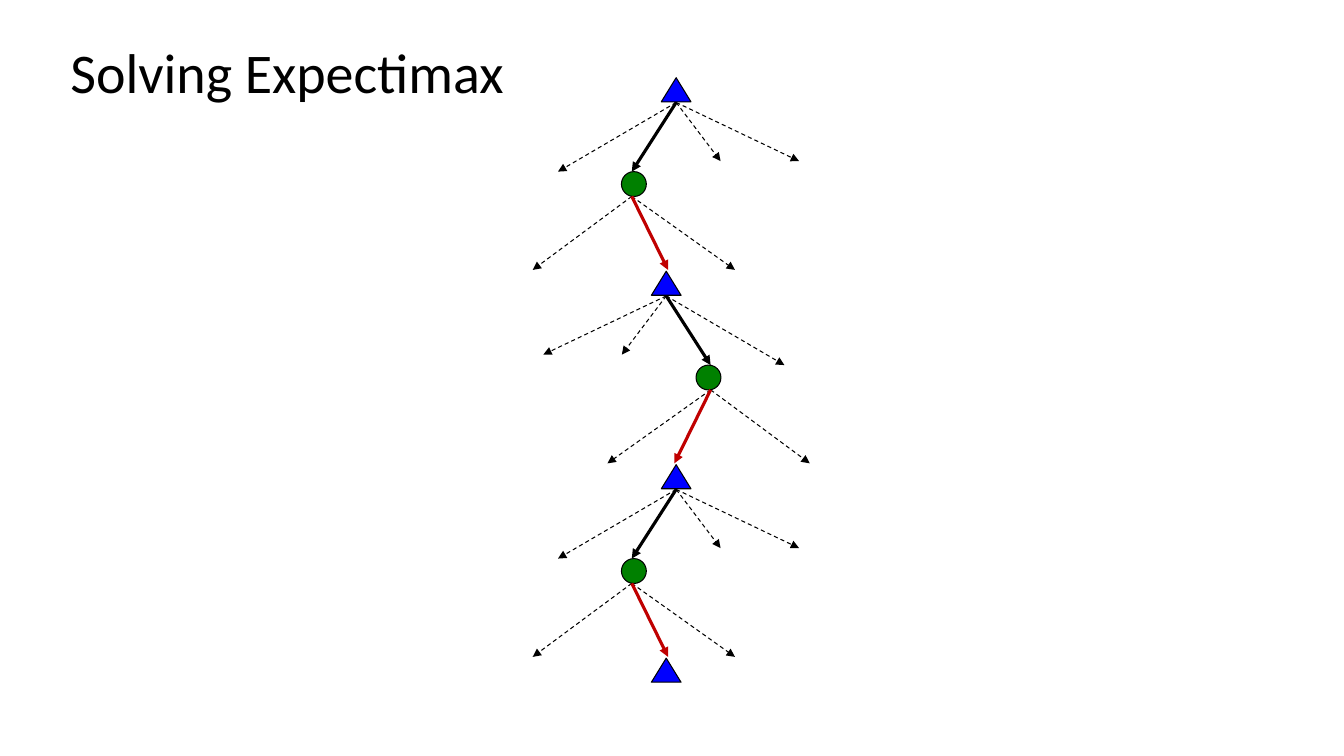
from lxml.etree import SubElement
from pptx import Presentation
from pptx.dml.color import RGBColor
from pptx.enum.dml import MSO_LINE
from pptx.enum.shapes import MSO_CONNECTOR, MSO_SHAPE
from pptx.enum.text import MSO_ANCHOR
from pptx.oxml.ns import qn
from pptx.util import Pt

TITLE = "Solving Expectimax"
COLORS = {"black": "000000", "max": "0000FF", "chance": "008000", "outcome": "C00000"}

# Base centre of each max node; the tree leans left (1) or right (-1) below it
LEVELS = [(483, 1), (475.9, -1), (483, 1)]
LAST_X = 475.9
FIRST_Y, LEVEL_STEP = 73.2, 138.2

# Offsets from the max node's base: branch start, branch ends (dx, dy)
MAX_START = (0, 0)
MAX_OPTIONS = [(-84.4, 49.4), (87.8, 41.9), (31.7, 41.9)]
MAX_CHOICE = (-31.7, 49.4)
CHANCE_START = (-31.7, 67.1)
CHANCE_OPTIONS = [(-102.5, 119.6), (42, 119.6)]
CHANCE_OUTCOME = (-5.8, 119.6)
CHANCE_CENTER = (-30.2, 58.3)

TRIANGLE_W, TRIANGLE_H, CIRCLE = 21.2, 17.2, 17.8
THIN, THICK = 0.75, 2.25

prs = Presentation()
prs.slide_width, prs.slide_height = Pt(960), Pt(540)
s = prs.slides.add_slide(prs.slide_layouts[6])


def rgb(name):
    return RGBColor.from_string(COLORS[name])


def node(kind, left, top, width, height, color):
    sp = s.shapes.add_shape(kind, Pt(left), Pt(top), Pt(width), Pt(height))
    sp.shadow.inherit = False
    sp.fill.solid()
    sp.fill.fore_color.rgb = rgb(color)
    sp.line.color.rgb = rgb("black")
    sp.line.width = Pt(THIN)


def max_node(x, y):
    node(MSO_SHAPE.ISOSCELES_TRIANGLE, x - TRIANGLE_W / 2, y - TRIANGLE_H - 0.5,
         TRIANGLE_W, TRIANGLE_H, "max")


def arrow(start, end, color="black", width=THIN, dashed=True):
    c = s.shapes.add_connector(MSO_CONNECTOR.STRAIGHT, *map(Pt, start + end))
    c.line.color.rgb = rgb(color)
    c.line.width = Pt(width)
    if dashed:
        c.line.dash_style = MSO_LINE.DASH
    sp_pr = c.line._get_or_add_ln().getparent()
    SubElement(c.line._get_or_add_ln(), qn("a:tailEnd"), type="triangle")
    SubElement(sp_pr, qn("a:effectLst"))


# Title
tf = s.shapes.add_textbox(Pt(43.2), Pt(28.8), Pt(828), Pt(49.7)).text_frame
tf.word_wrap = True
tf.vertical_anchor = MSO_ANCHOR.MIDDLE
p = tf.paragraphs[0]
p.text = TITLE
p.line_spacing = 0.9
p.font.name, p.font.size = "Calibri", Pt(40)
p.font.color.rgb = rgb("black")

# Tree: each level is a max node, its choice, a chance node and its outcome
for i, (x, lean) in enumerate(LEVELS):
    y = FIRST_Y + i * LEVEL_STEP

    def at(offset):
        return x + lean * offset[0], y + offset[1]

    max_node(x, y)
    for end in MAX_OPTIONS:
        arrow(at(MAX_START), at(end))
    arrow(at(MAX_START), at(MAX_CHOICE), width=THICK, dashed=False)

    cx, cy = at(CHANCE_CENTER)
    node(MSO_SHAPE.OVAL, cx - CIRCLE / 2, cy - CIRCLE / 2, CIRCLE, CIRCLE, "chance")
    for end in CHANCE_OPTIONS:
        arrow(at(CHANCE_START), at(end))
    arrow(at(CHANCE_START), at(CHANCE_OUTCOME), "outcome", THICK, dashed=False)

# Closing max node
max_node(LAST_X, FIRST_Y + len(LEVELS) * LEVEL_STEP)

prs.save("out.pptx")
